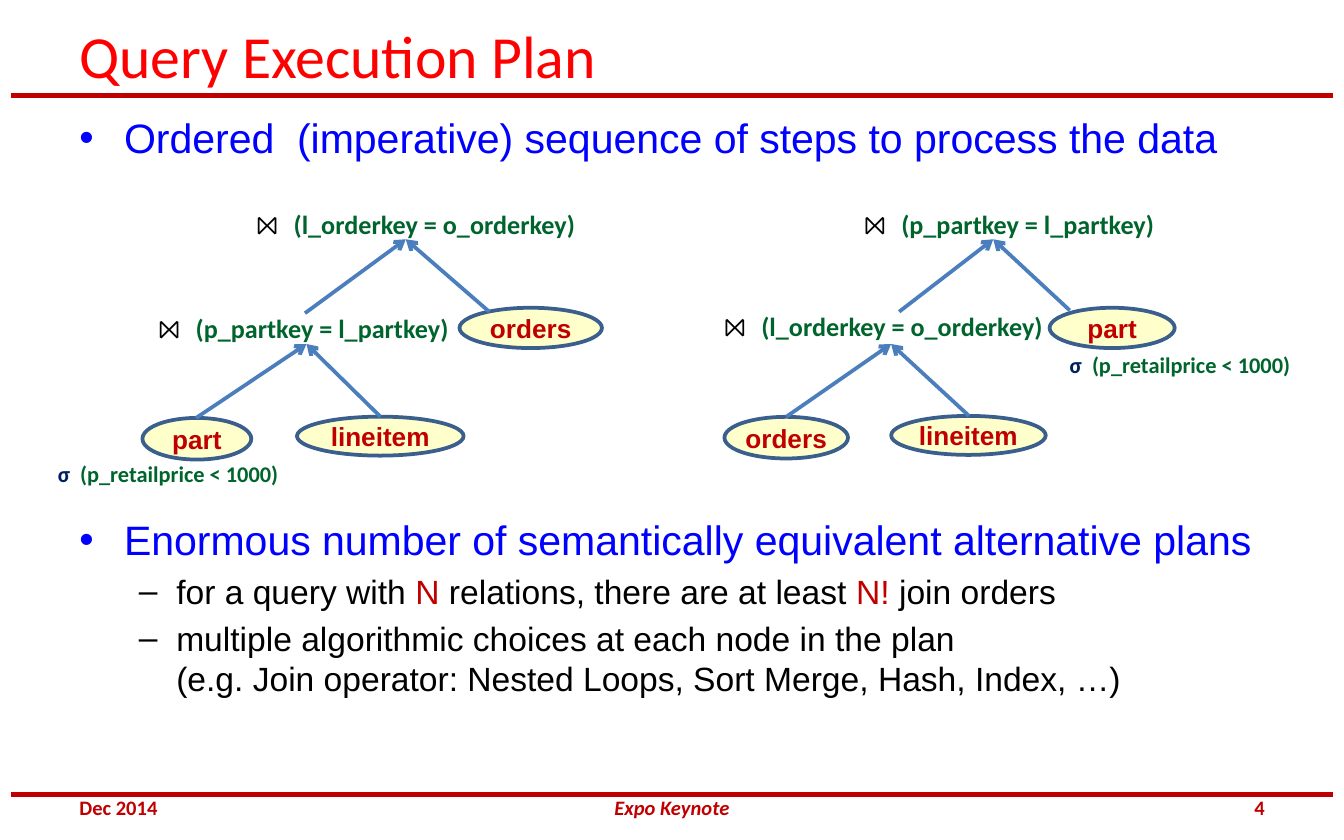
from lxml import etree
from pptx import Presentation
from pptx.dml.color import RGBColor
from pptx.enum.shapes import MSO_CONNECTOR as LINE, MSO_SHAPE as SHAPE
from pptx.enum.text import MSO_ANCHOR as ANCHOR, PP_ALIGN as ALIGN
from pptx.oxml.ns import qn
from pptx.util import Pt

COLORS = {
    "title": "FF0000", "bullet": "0000FF", "text": "000000",
    "accent": "C00000", "oval": "FFFFCC", "outline": "3A5F8C",
    "arrow": "4B7EBC", "condition": "00642D", "sigma": "002060",
}
BY_PART = "(p_partkey = l_partkey)"
BY_ORDER = "(l_orderkey = o_orderkey)"

# Ovals: name, left, top, width, height. Joins: condition, left, top, width.
# Arrows: start points, then the point where they meet.
PLANS = [
    {
        "ovals": [("part", 76.3, 223.9, 58.3, 22.3),
                  ("lineitem", 159.1, 223.2, 89.3, 20.9),
                  ("orders", 246.2, 164.9, 76.3, 21.6)],
        "arrows": [([(105.1, 223.9), (203.8, 223.2)], (164.2, 184.3)),
                   ([(163.4, 167.8), (262.1, 167)], (217.4, 128.2))],
        "joins": [(BY_PART, 85, 167.5, 159), (BY_ORDER, 137.5, 111.6, 173.5)],
        "filter": (31, 246.5),
    },
    {
        "ovals": [("orders", 388.1, 223.3, 66.2, 22.3),
                  ("lineitem", 477.4, 222.8, 82.8, 20.9),
                  ("part", 562.3, 164.9, 67, 21.6)],
        "arrows": [([(421.2, 223.3), (519.1, 222.8)], (477.4, 184.3)),
                   ([(481.7, 167), (573.1, 166.3)], (532.1, 128.2))],
        "joins": [(BY_ORDER, 388.1, 166.3, 174), (BY_PART, 463, 111.6, 159)],
        "filter": (573.1, 187.9),
    },
]


def rgb(name):
    return RGBColor.from_string(COLORS[name])


def set_font(font, name, size, color=None, bold=False, italic=False):
    font.name, font.size, font.bold, font.italic = name, Pt(size), bold, italic
    if color:
        font.color.rgb = rgb(color)


def set_frame(frame, x=0, y=0, wrap=True, anchor=ANCHOR.TOP):
    frame.margin_left = frame.margin_right = Pt(x)
    frame.margin_top = frame.margin_bottom = Pt(y)
    frame.word_wrap = wrap
    frame.vertical_anchor = anchor


def add_span(para, text, color):
    span = para.add_run()
    span.text = text
    span.font.color.rgb = rgb(color)
    return span


def add_box(shapes, left, top, width, height):
    return shapes.add_textbox(Pt(left), Pt(top), Pt(width), Pt(height))


def add_line(shapes, start, end, color, width, arrow=False):
    line = shapes.add_connector(LINE.STRAIGHT, *map(Pt, (*start, *end)))
    line.line.color.rgb = rgb(color)
    line.line.width = Pt(width)
    if arrow:
        outline = line.line._get_or_add_ln()
        etree.SubElement(outline, qn("a:tailEnd"), type="arrow")
    etree.SubElement(line._element.spPr, qn("a:effectLst"))


def add_relation(shapes, name, left, top, width, height):
    oval = shapes.add_shape(SHAPE.OVAL, Pt(left), Pt(top), Pt(width), Pt(height))
    oval.shadow.inherit = False
    oval.fill.solid()
    oval.fill.fore_color.rgb = rgb("oval")
    oval.line.color.rgb = rgb("outline")
    oval.line.width = Pt(2)
    set_frame(oval.text_frame, wrap=False, anchor=ANCHOR.MIDDLE)
    para = oval.text_frame.paragraphs[0]
    para.text = name
    para.alignment = ALIGN.CENTER
    set_font(para.font, "Arial", 14, "accent", bold=True)


def add_operator(shapes, symbol, condition, left, top, width, size,
                 symbol_font, symbol_color):
    box = add_box(shapes, left, top, width, size * 1.22)
    set_frame(box.text_frame, wrap=False)
    para = box.text_frame.paragraphs[0]
    set_font(para.font, "Calibri", size, bold=True)
    add_span(para, symbol, symbol_color).font.name = symbol_font
    add_span(para, condition, "condition")


def add_plan(page, plan):
    shapes = page.shapes.add_group_shape().shapes
    for oval in plan["ovals"]:
        add_relation(shapes, *oval)
    for starts, end in plan["arrows"]:
        for start in starts:
            add_line(shapes, start, end, "arrow", 2, arrow=True)
    for join in plan["joins"]:
        add_operator(shapes, "⨝ ", *join, 14, "Noto Sans Mono", "text")
    add_operator(shapes, "σ  ", "(p_retailprice < 1000)", *plan["filter"],
                 119.5, 12, "Calibri", "sigma")


def add_bullet(para, mark, spans, size, indent, hanging, before):
    para.space_before = Pt(before)
    set_font(para.font, "Arial", size)
    props = para._p.get_or_add_pPr()
    props.set("marL", str(Pt(indent)))
    props.set("indent", str(-Pt(hanging)))
    defaults = props.find(qn("a:defRPr"))
    defaults.addprevious(etree.Element(qn("a:buFont"), typeface="Arial"))
    defaults.addprevious(etree.Element(qn("a:buChar"), char=mark))
    for text, color in spans:
        for number, part in enumerate(text.split("\n")):
            if number:
                para.add_line_break()
            add_span(para, part, color)


def add_body(page):
    frame = add_box(page.shapes, 36, 57.2, 648, 360.7).text_frame
    set_frame(frame, 6.5, 3)
    top = ("•", 22, 24, 24)
    sub = ("–", 18, 52, 20)
    bullets = [
        (top, 4.4, [("Ordered  (imperative) sequence of steps to process the data",
                     "bullet")]),
        (top, 189.2, [("Enormous number of semantically equivalent alternative plans",
                       "bullet")]),
        (sub, 3.6, [("for a query with ", "text"), ("N", "accent"),
                    (" relations, there are at least ", "text"),
                    ("N!", "accent"), (" join orders", "text")]),
        (sub, 3.6, [("multiple algorithmic choices at each node in the plan\n"
                     "(e.g. Join operator: Nested Loops, Sort Merge, Hash, Index, …)",
                     "text")]),
    ]
    for number, ((mark, size, indent, hanging), before, spans) in enumerate(bullets):
        para = frame.add_paragraph() if number else frame.paragraphs[0]
        add_bullet(para, mark, spans, size, indent, hanging, before)


def add_title(page, text):
    title = page.shapes.title
    title.left, title.top, title.width, title.height = map(Pt, (36, 9, 648, 40.3))
    set_frame(title.text_frame, 6.5, 3, anchor=ANCHOR.MIDDLE)
    para = title.text_frame.paragraphs[0]
    para.text = text
    para.alignment = ALIGN.LEFT
    set_font(para.font, "Calibri", 32, "title")


def add_footer(page, text, left, width, alignment, italic=False):
    box = add_box(page.shapes, left, 423.2, width, 18)
    set_frame(box.text_frame, 6.5, 3, anchor=ANCHOR.MIDDLE)
    para = box.text_frame.paragraphs[0]
    para.text = text
    para.alignment = alignment
    set_font(para.font, "Calibri", 11, "accent", bold=True, italic=italic)


def main():
    deck = Presentation()
    deck.slide_width, deck.slide_height = Pt(720), Pt(450)
    page = deck.slides.add_slide(deck.slide_layouts[5])
    for y in (51.1, 425.5):
        add_line(page.shapes, (5.8, y), (714.2, y), "accent", 2.75)
    add_title(page, "Query Execution Plan")
    add_body(page)
    for plan in PLANS:
        add_plan(page, plan)
    add_footer(page, "Dec 2014", 36, 168, ALIGN.LEFT)
    add_footer(page, "Expo Keynote", 231, 258, ALIGN.CENTER, italic=True)
    add_footer(page, "4", 516, 168, ALIGN.RIGHT)
    deck.save("out.pptx")


if __name__ == "__main__":
    main()
